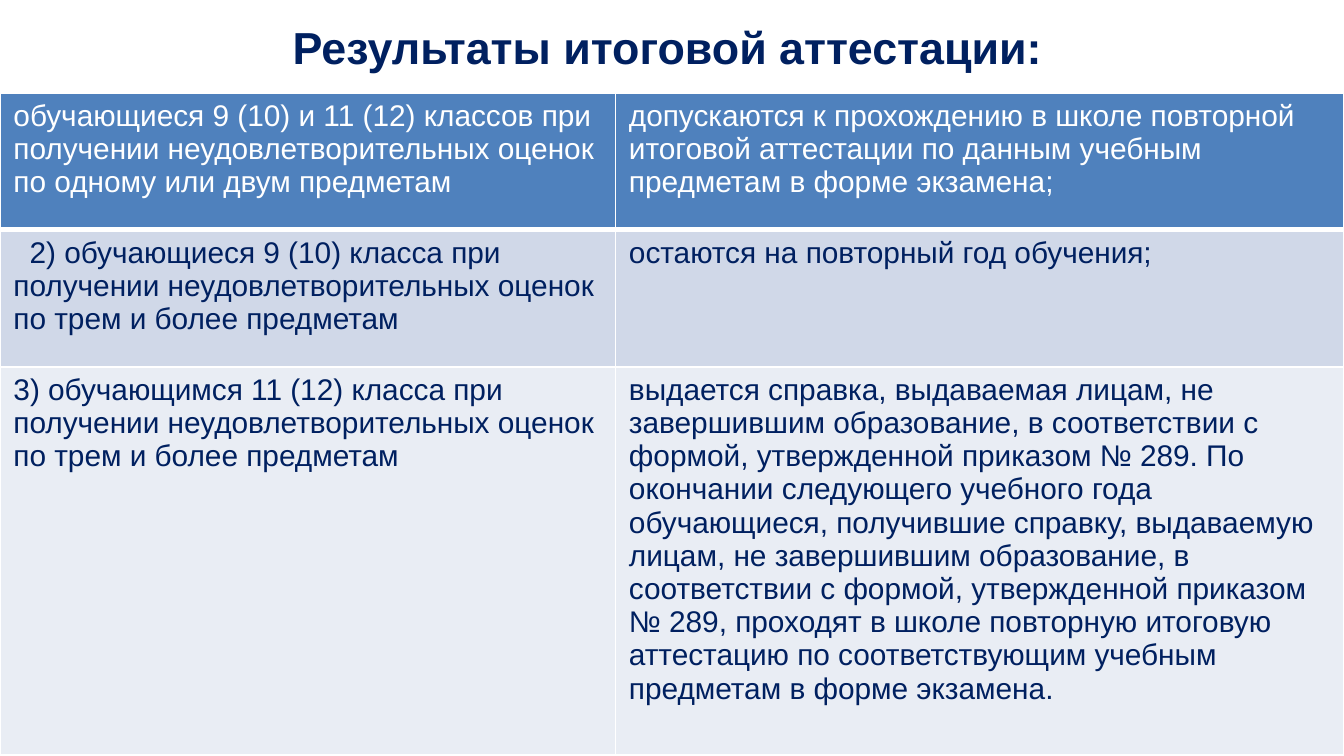
"""Build a slide that tabulates the outcomes of the final attestation."""
from lxml.etree import SubElement
from pptx import Presentation
from pptx.dml.color import RGBColor
from pptx.enum.text import MSO_ANCHOR, PP_ALIGN
from pptx.oxml.ns import qn
from pptx.util import Inches, Pt

NAVY = RGBColor(0x00, 0x20, 0x60)
WHITE = RGBColor(0xFF, 0xFF, 0xFF)
BLUE = RGBColor(0x4F, 0x81, 0xBD)
MIST = RGBColor(0xD0, 0xD8, 0xE8)
PALE = RGBColor(0xE9, 0xED, 0xF4)

TITLE = "Результаты итоговой аттестации:"
ROWS = [
    {"high": 1.02, "fill": BLUE, "ink": WHITE, "dent": 0, "rules": (1, 3),
     "texts": (
        "обучающиеся 9 (10) и 11 (12) классов при получении "
        "неудовлетворительных оценок по одному или двум предметам",
        "допускаются к прохождению в школе повторной итоговой аттестации "
        "по данным учебным предметам в форме экзамена;")},
    {"high": 1.02, "fill": MIST, "ink": NAVY, "dent": 0.12, "rules": (3, 1),
     "texts": (
        "2) обучающиеся 9 (10) класса при получении "
        "неудовлетворительных оценок по трем и более предметам",
        "остаются на повторный год обучения;")},
    {"high": 2.89, "fill": PALE, "ink": NAVY, "dent": 0, "rules": (1, 1),
     "texts": (
        "3) обучающимся 11 (12) класса при получении "
        "неудовлетворительных оценок по трем и более предметам",
        "выдается справка, выдаваемая лицам, не завершившим образование, "
        "в соответствии с формой, утвержденной приказом № 289. По окончании "
        "следующего учебного года обучающиеся, получившие справку, "
        "выдаваемую лицам, не завершившим образование, в соответствии "
        "с формой, утвержденной приказом № 289, проходят в школе повторную "
        "итоговую аттестацию по соответствующим учебным предметам "
        "в форме экзамена.")},
]
WIDTHS = (4.58, 5.42)
HEAD = {"name": "Arial", "size": Pt(24), "bold": True}
BODY = {"name": "Arial", "size": Pt(16), "bold": False}


def style(font, form, ink):
    """Apply the format values and the colour to a font."""
    for key, value in form.items():
        setattr(font, key, value)
    font.color.rgb = ink


def edge(cell, top, base):
    """Draw the white borders of a cell."""
    props = cell._tc.get_or_add_tcPr()
    sides = {"a:lnL": 1, "a:lnR": 1, "a:lnT": top, "a:lnB": base}
    for tag, wide in sides.items():
        line = SubElement(props, qn(tag), w=str(Pt(wide)))
        fill = SubElement(line, qn("a:solidFill"))
        SubElement(fill, qn("a:srgbClr"), val=str(WHITE))


def add_title(slide):
    """Place and format the title."""
    title = slide.shapes.title
    spot = {"left": 0.43, "top": 0.04, "width": 9.07, "height": 0.62}
    for key, value in spot.items():
        setattr(title, key, Inches(value))
    frame = title.text_frame
    frame.text = TITLE
    frame.vertical_anchor = MSO_ANCHOR.MIDDLE
    line = frame.paragraphs[0]
    line.alignment = PP_ALIGN.CENTER
    style(line.runs[0].font, HEAD, NAVY)


def add_grid(slide):
    """Add the table of cases and outcomes."""
    high = sum(row["high"] for row in ROWS)
    grid = slide.shapes.add_table(
        len(ROWS), len(WIDTHS), 0, Inches(0.69),
        Inches(sum(WIDTHS)), Inches(high)).table
    for col, wide in zip(grid.columns, WIDTHS):
        col.width = Inches(wide)
    for line, row in zip(grid.rows, ROWS):
        line.height = Inches(row["high"])
        for cell, text in zip(line.cells, row["texts"]):
            cell.text = text
            edge(cell, *row["rules"])
            cell.fill.solid()
            cell.fill.fore_color.rgb = row["fill"]
            style(cell.text_frame.paragraphs[0].runs[0].font, BODY, row["ink"])
        if row["dent"]:
            first = line.cells[0].text_frame.paragraphs[0]
            props = first._p.get_or_add_pPr()
            props.set("marL", "0")
            props.set("indent", str(Inches(row["dent"])))


def main():
    """Build and save the slide."""
    deck = Presentation()
    deck.slide_width = Inches(10)
    deck.slide_height = deck.slide_width * 9 // 16
    slide = deck.slides.add_slide(deck.slide_layouts[5])
    add_title(slide)
    add_grid(slide)
    deck.save("out.pptx")


if __name__ == "__main__":
    main()
